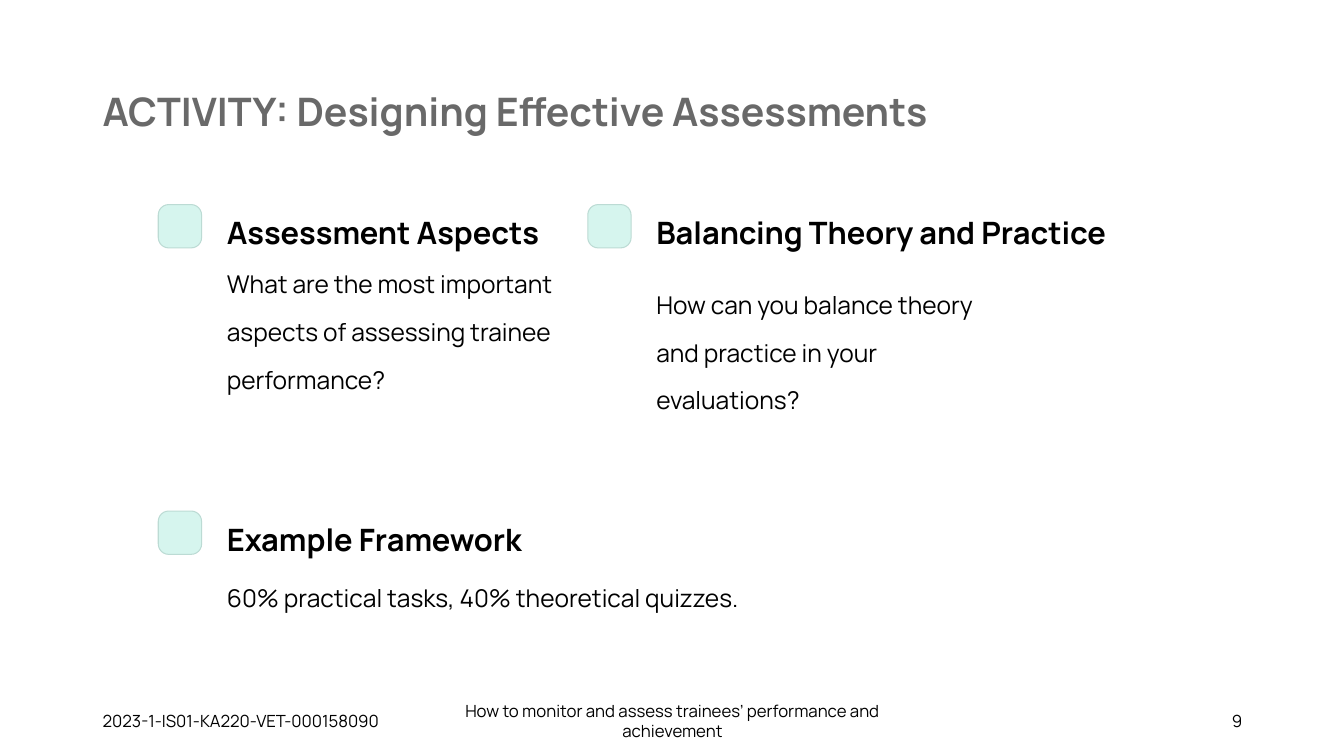
from pptx import Presentation
from pptx.dml.color import RGBColor
from pptx.enum.shapes import MSO_SHAPE
from pptx.enum.text import MSO_ANCHOR, PP_ALIGN
from pptx.util import Inches, Pt

FONT = "Manrope"
BLACK = RGBColor(0x00, 0x00, 0x00)
GRAY = RGBColor(0x69, 0x69, 0x69)
MINT = RGBColor(0xD6, 0xF5, 0xEE)
MINT_EDGE = RGBColor(0xBC, 0xDB, 0xD4)

TITLE = "ACTIVITY: Designing Effective Assessments"

# marker left, top, heading, heading size, body, body top, body size
TOPICS = [
    (1.57, 2.03, "Assessment Aspects", (3.33, 0.78),
     "What are the most important aspects of assessing trainee performance?",
     2.49, (3.33, 2.04)),
    (5.83, 2.03, "Balancing Theory and Practice", (5.41, 1.16),
     "How can you balance theory and practice in your evaluations?",
     2.69, (3.33, 1.45)),
    (1.57, 5.07, "Example Framework", (3.99, 0.39),
     "60% practical tasks, 40% theoretical quizzes.",
     5.6, (7.58, 0.4)),
]

# left, width, alignment, text
FOOTER = [
    (0.92, 3, PP_ALIGN.LEFT, "2023-1-IS01-KA220-VET-000158090"),
    (4.42, 4.5, PP_ALIGN.CENTER,
     "How to monitor and assess trainees’ performance and achievement"),
    (9.42, 3, PP_ALIGN.RIGHT, "9"),
]
FOOTER_TOP, FOOTER_HEIGHT = 6.95, 0.4

MARKER_SIZE = 0.43
TEXT_OFFSET = 0.68


def add_text(slide, text, left, top, width, height, size, color=BLACK,
             bold=False, align=PP_ALIGN.LEFT, spacing=1.0,
             anchor=MSO_ANCHOR.TOP, insets=(0, 0)):
    """Add a one-paragraph box; insets are (horizontal, vertical) inches."""
    box = slide.shapes.add_textbox(
        Inches(left), Inches(top), Inches(width), Inches(height))
    frame = box.text_frame
    frame.word_wrap = True
    frame.vertical_anchor = anchor
    frame.margin_left = frame.margin_right = Inches(insets[0])
    frame.margin_top = frame.margin_bottom = Inches(insets[1])
    paragraph = frame.paragraphs[0]
    paragraph.text = text
    paragraph.alignment = align
    paragraph.line_spacing = spacing
    font = paragraph.font
    font.name, font.size, font.bold = FONT, Pt(size), bold
    font.color.rgb = color


def add_marker(slide, left, top):
    marker = slide.shapes.add_shape(
        MSO_SHAPE.ROUNDED_RECTANGLE, Inches(left), Inches(top),
        Inches(MARKER_SIZE), Inches(MARKER_SIZE))
    marker.adjustments[0] = 0.24
    marker.shadow.inherit = False
    marker.fill.solid()
    marker.fill.fore_color.rgb = MINT
    marker.line.color.rgb = MINT_EDGE
    marker.line.width = Pt(0.75)


def main():
    prs = Presentation()
    prs.slide_width, prs.slide_height = Inches(13.33), Inches(7.5)
    slide = prs.slides.add_slide(prs.slide_layouts[6])
    framed = {"anchor": MSO_ANCHOR.MIDDLE, "insets": (0.1, 0.05)}

    add_text(slide, TITLE, 0.92, 0.4, 9.52, 1.45, 28, GRAY, bold=True,
             align=PP_ALIGN.JUSTIFY, spacing=0.9, **framed)
    for left, width, align, text in FOOTER:
        add_text(slide, text, left, FOOTER_TOP, width, FOOTER_HEIGHT, 12,
                 align=align, **framed)
    for left, top, heading, heading_size, body, body_top, body_size in TOPICS:
        add_marker(slide, left, top)
        text_left = left + TEXT_OFFSET
        add_text(slide, heading, text_left, top, *heading_size, 22,
                 bold=True, spacing=1.25)
        add_text(slide, body, text_left, body_top, *body_size, 17.5,
                 spacing=1.63)

    prs.save("out.pptx")


if __name__ == "__main__":
    main()
